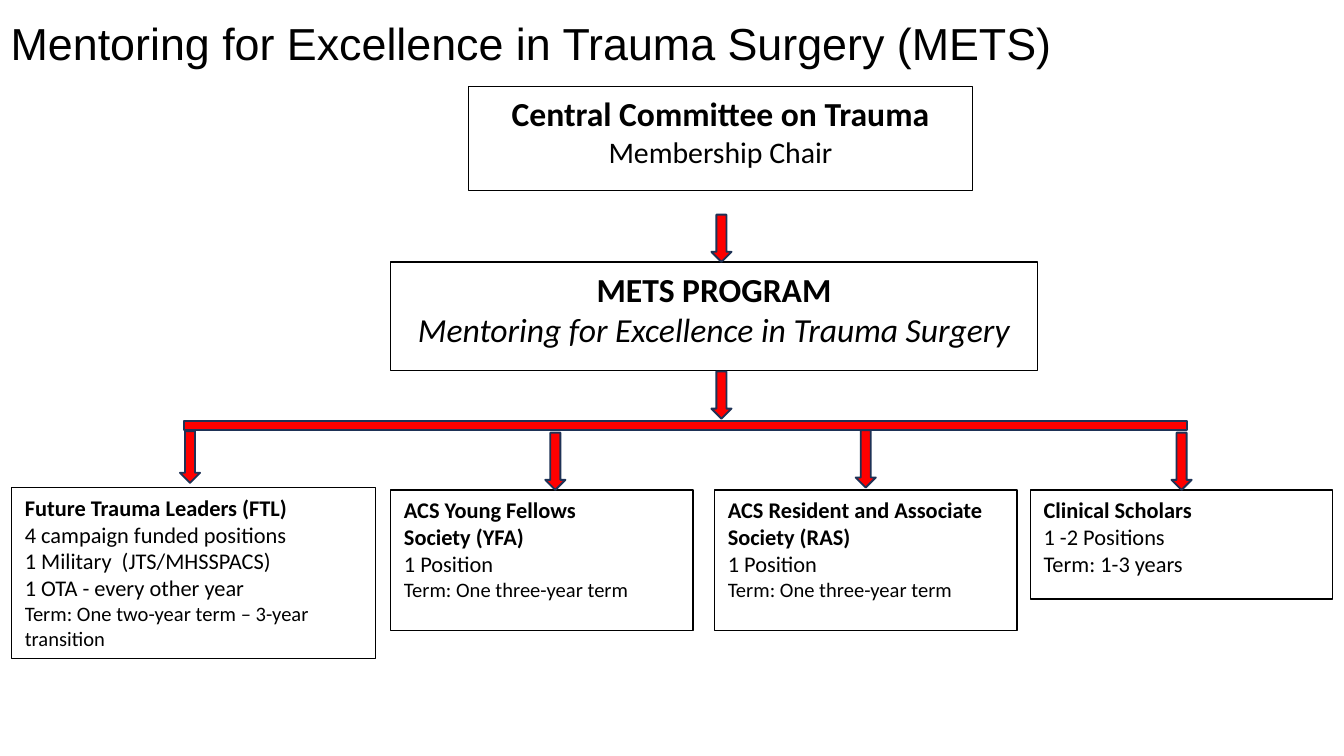
from pptx import Presentation
from pptx import util as u
from pptx.dml.color import RGBColor
from pptx.enum import shapes, text

INK = {"black": "000000", "red": "FF0000", "navy": "1E3256"}
KIND = shapes.MSO_SHAPE


class Chart:
    """Draws the parts of an organisation chart on one slide, in points."""

    def __init__(self, deck):
        self.slide = deck.slides.add_slide(deck.slide_layouts[5])
        self.face = "Calibri"

    def hue(self, name):
        return RGBColor.from_string(INK[name])

    def font(self, para, face, size, bold=False, slant=False):
        font = para.font
        font.name, font.size = face, u.Pt(size)
        font.bold, font.italic = bold, slant
        font.color.rgb = self.hue("black")

    def title(self, words, left, top, width, height):
        box = self.slide.shapes.title
        box.left, box.top = u.Pt(left), u.Pt(top)
        box.width, box.height = u.Pt(width), u.Pt(height)
        frame = box.text_frame
        frame.text = words
        frame.auto_size = text.MSO_AUTO_SIZE.NONE
        frame.vertical_anchor = text.MSO_ANCHOR.TOP
        para = frame.paragraphs[0]
        para.alignment = text.PP_ALIGN.LEFT
        para.line_spacing = 0.9
        self.font(para, "Arial", 24)

    def shape(self, kind, left, top, width, height, fill, line, weight):
        item = self.slide.shapes.add_shape(
            kind, u.Pt(left), u.Pt(top), u.Pt(width), u.Pt(height))
        item.shadow.inherit = False
        if fill:
            item.fill.solid()
            item.fill.fore_color.rgb = self.hue(fill)
        else:
            item.fill.background()
        item.line.color.rgb = self.hue(line)
        item.line.width = u.Pt(weight)
        return item

    def box(self, left, top, width, height, lines, align=text.PP_ALIGN.LEFT):
        item = self.shape(KIND.RECTANGLE, left, top, width, height,
                          None, "black", 0.75)
        frame = item.text_frame
        frame.word_wrap = True
        frame.vertical_anchor = text.MSO_ANCHOR.TOP
        for i, (words, size, look) in enumerate(lines):
            para = frame.add_paragraph() if i else frame.paragraphs[0]
            para.text = words
            para.alignment = align
            self.font(para, self.face, size, "b" in look, "i" in look)

    def arrow(self, mid, top, height):
        self.shape(KIND.DOWN_ARROW, mid - 5.4, top, 10.8, height,
                   "red", "navy", 1)

    def bar(self, left, top, width, height):
        self.shape(KIND.RECTANGLE, left, top, width, height,
                   "red", "navy", 1)


def main():
    deck = Presentation()
    deck.slide_width, deck.slide_height = u.Pt(720), u.Pt(405)
    chart = Chart(deck)
    chart.title("Mentoring for Excellence in Trauma Surgery (METS)",
                -1.5, 8, 654, 88.5)

    mid = text.PP_ALIGN.CENTER
    chart.box(251, 46.5, 270, 55.5, [
        ("Central Committee on Trauma", 18, "b"),
        ("Membership Chair", 16, "")], mid)
    chart.box(209.3, 140.3, 346.5, 58.3, [
        ("METS PROGRAM", 18, "b"),
        ("Mentoring for Excellence in Trauma Surgery", 18, "i")], mid)

    term = [("1 Position", 12, ""), ("Term: One three-year term", 11, "")]
    groups = [
        (6.2, 261, 195, 91.8, [
            ("Future Trauma Leaders (FTL)", 12, "b"),
            ("4 campaign funded positions", 12, ""),
            ("1 Military  (JTS/MHSSPACS)", 12, ""),
            ("1 OTA - every other year", 12, ""),
            ("Term: One two-year term – 3-year transition", 11, "")]),
        (209.3, 262.5, 162, 75.5, [
            ("ACS Young Fellows", 12, "b"),
            ("Society (YFA)", 12, "b"), *term]),
        (382.8, 262.5, 162, 75.5, [
            ("ACS Resident and Associate Society (RAS)", 12, "b"), *term]),
        (552, 262.5, 162, 58.5, [
            ("Clinical Scholars", 12, "b"),
            ("1 -2 Positions", 12, ""),
            ("Term: 1-3 years", 12, "")]),
    ]
    for group in groups:
        chart.box(*group)

    arrows = [(386.5, 115, 25.3), (297.5, 231.8, 30.7), (101.8, 231, 27.7),
              (463.8, 230.5, 30.7), (633, 231.8, 30.7), (386.5, 199, 25.3)]
    for arrow in arrows:
        chart.arrow(*arrow)
    chart.bar(98.5, 225.5, 537.2, 5)

    deck.save("out.pptx")


if __name__ == "__main__":
    main()
